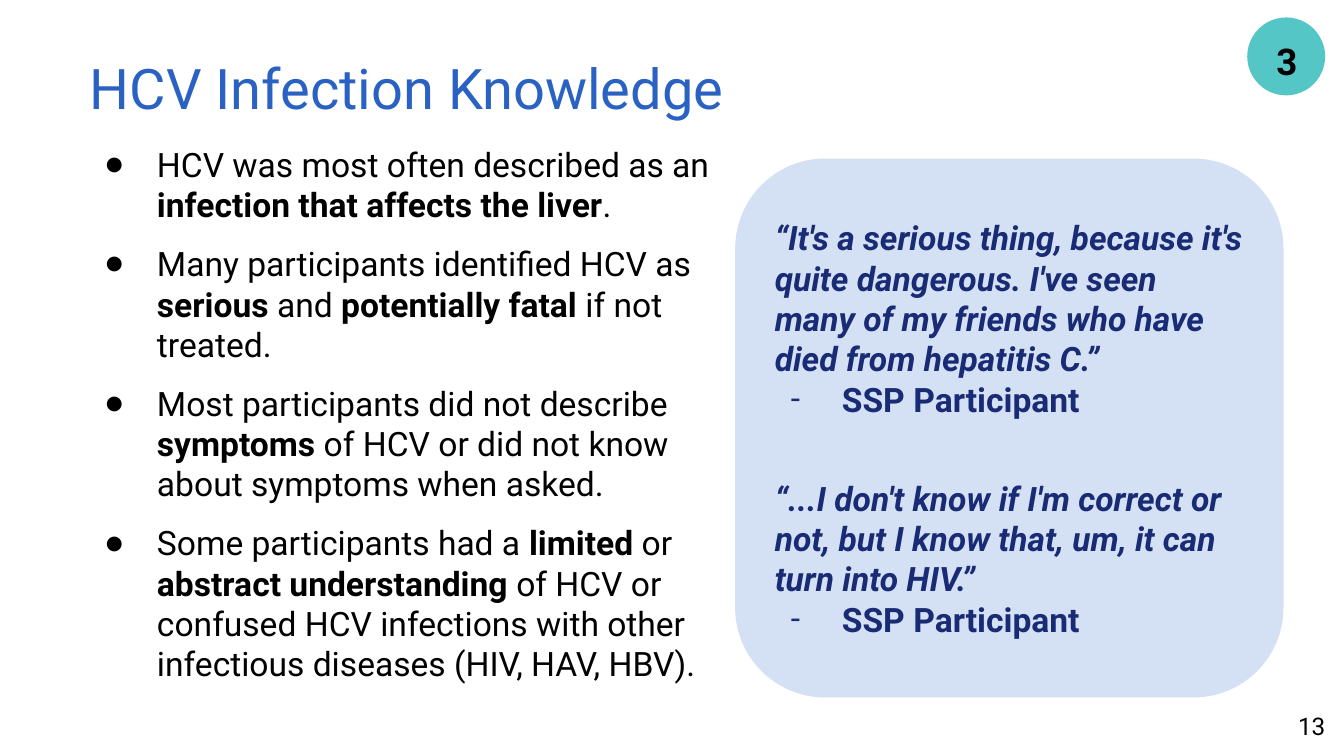
import pptx
import pptx.util
import pptx.dml.color
import pptx.enum.shapes
import pptx.enum.text
import lxml.etree
from pptx.util import Inches

SHAPE = pptx.enum.shapes.MSO_SHAPE
ALIGN = pptx.enum.text.PP_ALIGN
ANCHOR = pptx.enum.text.MSO_ANCHOR


def color(code):
    return pptx.dml.color.RGBColor.from_string(code)


def write(shape, text, size=18, ink="000000", bold=False, italic=False,
          align=ALIGN.LEFT, before=0, lines=None, bullet=None, scale=100):
    """Add one paragraph; words between asterisks switch weight."""
    frame = shape.text_frame
    frame.word_wrap = True
    para = frame.paragraphs[0]
    if para.runs:
        para = frame.add_paragraph()
    para.alignment = align
    para.space_before = pptx.util.Pt(before)
    if lines:
        para.line_spacing = lines
    if bullet:
        props = para._p.get_or_add_pPr()
        props.set("marL", str(Inches(0.5)))
        props.set("indent", str(Inches(-0.38)))
        tint = lxml.etree.SubElement(props, pptx.oxml.ns.qn("a:buClr"))
        lxml.etree.SubElement(tint, pptx.oxml.ns.qn("a:srgbClr"), val=ink)
        lxml.etree.SubElement(props, pptx.oxml.ns.qn("a:buSzPct"), val=str(scale * 1000))
        lxml.etree.SubElement(props, pptx.oxml.ns.qn("a:buFont"), typeface="Roboto")
        lxml.etree.SubElement(props, pptx.oxml.ns.qn("a:buChar"), char=bullet)
    for i, part in enumerate(text.split("*")):
        if part:
            run = para.add_run()
            run.text = part
            font = run.font
            font.name = "Roboto"
            font.size = pptx.util.Pt(size)
            font.bold = bold != (i % 2 == 1)
            font.italic = italic
            font.color.rgb = color(ink)


def place(left, top, width, height, kind=None, fill=None, inset=0.1):
    """Add a text box, or a filled shape when a kind is given."""
    area = [Inches(n) for n in (left, top, width, height)]
    if kind is None:
        shape = slide.shapes.add_textbox(*area)
    else:
        shape = slide.shapes.add_shape(kind, *area)
        shape.shadow.inherit = False
        shape.fill.solid()
        shape.fill.fore_color.rgb = color(fill)
        shape.line.fill.background()
    frame = shape.text_frame
    frame.margin_left = frame.margin_right = Inches(inset)
    frame.margin_top = frame.margin_bottom = Inches(inset)
    return shape


# Wide 16:9 slide
deck = pptx.Presentation()
deck.slide_width = Inches(10)
deck.slide_height = Inches(10) * 9 // 16
slide = deck.slides.add_slide(deck.slide_layouts[6])

# Title
title = place(0.57, 0.3, 8.92, 0.63)
write(title, "HCV Infection Knowledge", size=30, ink="2A62C3")

# Findings
points = [
    "HCV was most often described as an *infection that affects the liver*.",
    "Many participants identified HCV as *serious* and *potentially fatal* if not treated.",
    "Most participants did not describe *symptoms* of HCV or did not know "
    "about symptoms when asked.",
    "Some participants had a *limited* or *abstract understanding* of HCV or "
    "confused HCV infections with other infectious diseases (HIV, HAV, HBV).",
]
body = place(0.57, 0.97, 4.9, 4.22)
for i, point in enumerate(points):
    write(body, point, before=10 if i else 5, bullet="●", scale=58)

# Page number
page = place(9.36, 5.19, 0.6, 0.43)
write(page, "13", size=13, align=ALIGN.RIGHT)

# Section badge
place(9.28, 0.13, 0.58, 0.58, SHAPE.OVAL, "55C6C6")
badge = place(9.4, 0.25, 0.35, 0.34, inset=0)
badge.text_frame.vertical_anchor = ANCHOR.MIDDLE
write(badge, "3", size=19.7, bold=True, align=ALIGN.CENTER, lines=1.2)

# Quotes
quotes = [
    "“It's a serious thing, because it's quite dangerous. I've seen many of "
    "my friends who have died from hepatitis C.”",
    "“...I don't know if I'm correct or not, but I know that, um, it can turn into HIV.”",
]
card = place(5.47, 1.18, 4.08, 4.01, SHAPE.ROUNDED_RECTANGLE, "D4E0F3")
card.adjustments[0] = 0.167
card.text_frame.vertical_anchor = ANCHOR.MIDDLE
for i, quote in enumerate(quotes):
    write(card, quote, ink="192B74", bold=True, italic=True, before=31.5 * i)
    write(card, "SSP Participant", ink="192B74", bold=True, bullet="-")

deck.save("out.pptx")
